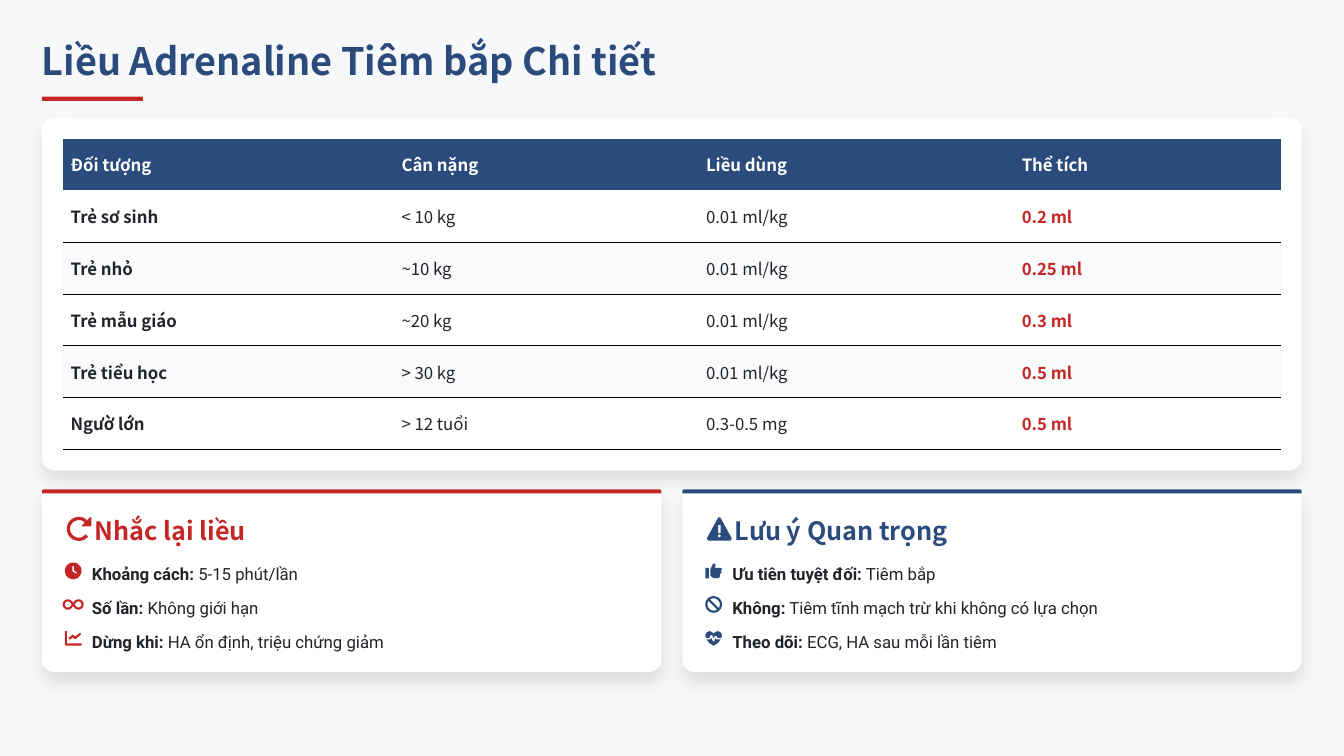
"""Builds a slide on intramuscular adrenaline doses with a table and two note panels."""
import math

from lxml import etree
from pptx import Presentation
from pptx import util as u
from pptx.dml.color import RGBColor
from pptx.enum import shapes, text
from pptx.oxml import ns

NAVY = RGBColor(0x2A, 0x4B, 0x7C)
RED = RGBColor(0xC5, 0x27, 0x26)
INK = RGBColor(0x21, 0x25, 0x29)
WHITE = RGBColor(0xFF, 0xFF, 0xFF)
STRIPE = RGBColor(0xF9, 0xFA, 0xFB)
PAGE = RGBColor(0xF7, 0xF8, 0xFA)
PLAIN_TABLE = "{2D5ABB26-0587-4C30-8999-92F81FD0307C}"


def arc(x, y, radius, start=0, end=360, steps=32):
    angles = [math.radians(start + (end - start) * i / steps) for i in range(steps + 1)]
    return [(x + radius * math.cos(a), y + radius * math.sin(a)) for a in angles]


ICONS = {
    "repeat": [arc(50, 50, 48, 40, 312) + arc(50, 50, 35, 312, 40),
               [(62, 37), (96, 2), (100, 6), (100, 36), (95, 40), (65, 40)]],
    "clock": [arc(50, 50, 50),
              [(45, 22), (55, 22), (55, 48), (73, 60), (68, 68), (45, 53)]],
    "infinity": [arc(18, 50, 31, 50, 310) + [(50, 40)] + arc(82, 50, 31, 230, 490) + [(50, 60)],
                 arc(18, 50, 18, 45, 315) + [(42, 50)],
                 arc(82, 50, 18, 225, 495) + [(58, 50)]],
    "chart": [[(0, 8), (13, 8), (13, 82), (100, 82), (100, 95), (8, 95), (0, 88)],
              [(22, 50), (47, 28), (62, 40), (91, 18), (98, 27), (62, 58), (47, 45), (30, 60)]],
    "warning": [[(46, 4), (54, 4), (100, 88), (95, 97), (5, 97), (0, 88)],
                [(45, 34), (55, 34), (55, 67), (45, 67)], arc(50, 78, 6)],
    "thumb": [[(0, 32), (22, 32), (22, 95), (0, 95)],
              [(31, 40), (44, 12), (52, 5), (62, 12), (58, 32), (95, 32), (100, 40), (94, 50),
               (98, 58), (90, 68), (88, 80), (82, 94), (50, 94), (31, 80)]],
    "ban": [arc(50, 50, 50), arc(50, 50, 37, -125, 35), arc(50, 50, 37, 55, 215)],
    "heart": [[(50, 22), (38, 12), (25, 8), (10, 14), (0, 30), (4, 48), (25, 48), (34, 30),
               (42, 32), (50, 52), (58, 36), (66, 36), (73, 48), (96, 48), (100, 30),
               (90, 14), (75, 8), (62, 12)],
              [(8, 58), (30, 58), (36, 48), (46, 70), (53, 70), (61, 52), (68, 58), (92, 58),
               (75, 80), (50, 95), (25, 80)]],
}

DOSES = [
    ("Đối tượng", "Cân nặng", "Liều dùng", "Thể tích"),
    ("Trẻ sơ sinh", "< 10 kg", "0.01 ml/kg", "0.2 ml"),
    ("Trẻ nhỏ", "~10 kg", "0.01 ml/kg", "0.25 ml"),
    ("Trẻ mẫu giáo", "~20 kg", "0.01 ml/kg", "0.3 ml"),
    ("Trẻ tiểu học", "> 30 kg", "0.01 ml/kg", "0.5 ml"),
    ("Ngườ lớn", "> 12 tuổi", "0.3-0.5 mg", "0.5 ml"),
]

PANELS = [
    (1.41, RED, "repeat", "Nhắc lại liều", [
        ("clock", "Khoảng cách:", " 5-15 phút/lần", 7.01),
        ("infinity", "Số lần:", " Không giới hạn", 5.79),
        ("chart", "Dừng khi:", " HA ổn định, triệu chứng giảm", 9.96)]),
    (22.93, NAVY, "warning", "Lưu ý Quan trọng", [
        ("thumb", "Ưu tiên tuyệt đối:", " Tiêm bắp", 7.06),
        ("ban", "Không:", " Tiêm tĩnh mạch trừ khi không có lựa chọn", 12.32),
        ("heart", "Theo dõi:", " ECG, HA sau mỗi lần tiêm", 8.89)]),
]


def add_run(paragraph, content, *, size=16, font="Noto Sans CJK SC", color=INK, bold=True):
    run = paragraph.add_run()
    run.text = content
    run.font.size = u.Pt(size)
    run.font.name = font
    run.font.bold = bold
    run.font.color.rgb = color


class SlideBuilder:
    def __init__(self, slide):
        self.slide = slide
        fill = slide.background.fill
        fill.solid()
        fill.fore_color.rgb = PAGE

    def paint(self, shape, color):
        shape.fill.solid()
        shape.fill.fore_color.rgb = color
        shape.line.fill.background()
        shape.shadow.inherit = False

    def block(self, left, top, width, height, color, radii=None, shadow=False):
        kind = shapes.MSO_SHAPE.ROUND_2_SAME_RECTANGLE if radii else shapes.MSO_SHAPE.RECTANGLE
        shape = self.slide.shapes.add_shape(
            kind, u.Cm(left), u.Cm(top), u.Cm(width), u.Cm(height))
        for index, radius in enumerate(radii or ()):
            shape.adjustments[index] = radius / height
        self.paint(shape, color)
        if shadow:
            effects = shape._element.spPr.find(ns.qn("a:effectLst"))
            outer = etree.SubElement(
                effects, ns.qn("a:outerShdw"), blurRad=str(u.Pt(15)), dist=str(u.Pt(10)),
                dir="5400000", algn="ctr", rotWithShape="0")
            black = etree.SubElement(outer, ns.qn("a:srgbClr"), val="000000")
            etree.SubElement(black, ns.qn("a:alpha"), val="10000")

    def icon(self, name, left, top, size, color):
        first, *others = ICONS[name]
        builder = self.slide.shapes.build_freeform(*first[0], scale=u.Cm(size) / 100)
        builder.add_line_segments(first[1:])
        for contour in others:
            builder.move_to(*contour[0])
            builder.add_line_segments(contour[1:])
        self.paint(builder.convert_to_shape(u.Cm(left), u.Cm(top)), color)

    def label(self, left, top, width, height, spacing, *runs):
        box = self.slide.shapes.add_textbox(
            u.Cm(left), u.Cm(top), u.Cm(width), u.Cm(height))
        frame = box.text_frame
        frame.word_wrap = True
        frame.vertical_anchor = text.MSO_ANCHOR.MIDDLE
        frame.margin_left = frame.margin_right = frame.margin_top = frame.margin_bottom = 0
        paragraph = frame.paragraphs[0]
        paragraph.line_spacing = spacing
        for content, style in runs:
            add_run(paragraph, content, **style)

    def underline(self, cell):
        properties = cell._tc.get_or_add_tcPr()
        line = etree.Element(ns.qn("a:lnB"), w=str(u.Pt(0.8)))
        fill = etree.SubElement(line, ns.qn("a:solidFill"))
        etree.SubElement(fill, ns.qn("a:srgbClr"), val="000000")
        properties.insert(0, line)

    def table(self, left, top, widths, row_height, rows):
        table = self.slide.shapes.add_table(
            len(rows), len(widths), u.Cm(left), u.Cm(top),
            u.Cm(sum(widths)), u.Cm(row_height * len(rows))).table
        table._tbl.tblPr.find(ns.qn("a:tableStyleId")).text = PLAIN_TABLE
        table.horz_banding = False
        for column, width in zip(table.columns, widths):
            column.width = u.Cm(width)
        for r, values in enumerate(rows):
            table.rows[r].height = u.Cm(row_height)
            for c, value in enumerate(values):
                cell = table.cell(r, c)
                cell.vertical_anchor = text.MSO_ANCHOR.MIDDLE
                cell.fill.solid()
                cell.fill.fore_color.rgb = NAVY if r == 0 else WHITE if r % 2 else STRIPE
                color = WHITE if r == 0 else RED if c == 3 else INK
                add_run(cell.text_frame.paragraphs[0], value, color=color,
                        bold=r == 0 or c in (0, 3))
                if r:
                    self.underline(cell)

    def panel(self, left, color, icon, heading, items):
        top, width = 16.44, 20.81
        self.block(left, top, width, 6.14, WHITE, radii=(0.14, 0.42), shadow=True)
        self.block(left, top, width, 0.14, color, radii=(0.07, 0))
        self.icon(icon, left + 0.82, top + 0.91, 0.84, color)
        self.label(left + 1.76, top + 0.78, 18.77, 1.12, 1.1,
                   (heading, {"size": 24, "color": color}))
        for index, (mark, lead, detail, length) in enumerate(items):
            row = top + 2.33 + 1.13 * index
            self.icon(mark, left + 0.77, row + 0.13, 0.56, color)
            self.label(left + 1.68, row, length, 0.84, 1.3,
                       (lead, {"font": "Roboto"}), (detail, {"font": "Roboto", "bold": False}))


def main():
    presentation = Presentation()
    presentation.slide_width = u.Cm(45.16)
    presentation.slide_height = u.Cm(25.4)
    builder = SlideBuilder(presentation.slides.add_slide(presentation.slide_layouts[6]))
    builder.label(1.41, 1.41, 42.98, 1.41, 0.9,
                  ("Liều Adrenaline Tiêm bắp Chi tiết", {"size": 36, "color": NAVY}))
    builder.block(1.41, 3.25, 3.39, 0.14, RED)
    builder.block(1.41, 3.96, 42.33, 11.85, WHITE, radii=(0.42, 0.42), shadow=True)
    builder.table(2.12, 4.66, (11.12, 10.23, 10.61, 8.96), 1.74, DOSES)
    for panel in PANELS:
        builder.panel(*panel)
    presentation.save("out.pptx")


if __name__ == "__main__":
    main()
